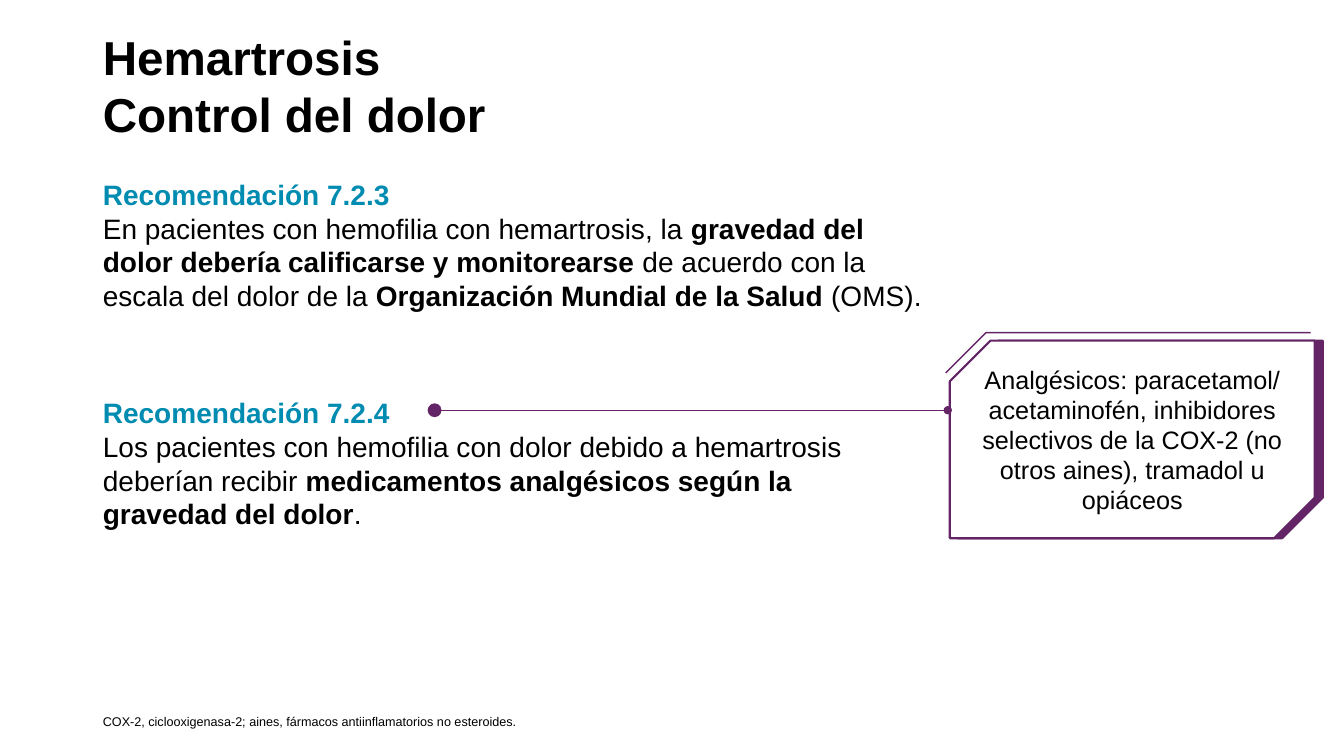
import pptx
import pptx.util
import pptx.dml.color
import pptx.enum.shapes
import pptx.enum.text
from dataclasses import dataclass
from lxml import etree
from pptx.util import Inches, Pt

RGB = pptx.dml.color.RGBColor.from_string
ALIGN = pptx.enum.text.PP_ALIGN
ANCHOR = pptx.enum.text.MSO_ANCHOR
SHAPE = pptx.enum.shapes.MSO_SHAPE
A = "{http://schemas.openxmlformats.org/drawingml/2006/main}"


@dataclass(frozen=True)
class Theme:
    face: str = "Arial"
    ink: str = "000000"
    teal: str = "008BB0"
    plum: str = "642566"
    white: str = "FFFFFF"
    title: int = 34
    body: int = 20
    label: int = 18
    note: int = 9


class Page:
    def __init__(self, deck, theme):
        self.theme = theme
        self.slide = deck.slides.add_slide(deck.slide_layouts[3])
        self.shapes = self.slide.shapes

    def font(self, para, size, bold=False):
        font = para.font
        font.name, font.size, font.bold = self.theme.face, Pt(size), bold
        font.color.rgb = RGB(self.theme.ink)

    def holder(self, index, box, anchor):
        """Move a placeholder and return its text frame."""
        shape = self.slide.placeholders[index]
        shape.left, shape.top, shape.width, shape.height = map(Inches, box)
        frame = shape.text_frame
        frame.word_wrap = True
        frame.auto_size = pptx.enum.text.MSO_AUTO_SIZE.NONE
        frame.vertical_anchor = anchor
        return frame

    def plain(self, para, size, bold=False, gap=0):
        """Left-aligned paragraph with no bullet."""
        para.alignment = ALIGN.LEFT
        para.space_before = Pt(gap)
        props = para._p.get_or_add_pPr()
        props.set("marL", "0")
        props.set("indent", "0")
        etree.SubElement(props, A + "buNone")
        self.font(para, size, bold)

    def title(self, text, box):
        para = self.holder(0, box, ANCHOR.MIDDLE).paragraphs[0]
        para.text = text
        self.plain(para, self.theme.title, True)

    def note(self, text, box):
        frame = self.holder(2, box, ANCHOR.BOTTOM)
        frame.margin_bottom = 0
        para = frame.paragraphs[0]
        para.text = text
        self.plain(para, self.theme.note)

    def advice(self, items, box, gap):
        """Headed paragraphs; every second part of the text is bold."""
        frame = self.holder(1, box, ANCHOR.TOP)
        for i, (head, parts) in enumerate(items):
            para = frame.add_paragraph() if i else frame.paragraphs[0]
            self.plain(para, self.theme.body, gap=gap if i else 0)
            run = para.add_run()
            run.text = head
            run.font.bold = True
            run.font.color.rgb = RGB(self.theme.teal)
            para.add_line_break()
            for j, part in enumerate(parts):
                run = para.add_run()
                run.text = part
                if j % 2:
                    run.font.bold = True

    def stroke(self, line, width):
        line.color.rgb = RGB(self.theme.plum)
        line.width = Pt(width)

    def snip(self, box, fill, text=None):
        shape = self.shapes.add_shape(SHAPE.SNIP_2_DIAG_RECTANGLE, *map(Inches, box))
        shape.adjustments[0], shape.adjustments[1] = 0.206, 0
        shape.shadow.inherit = False
        shape.fill.solid()
        shape.fill.fore_color.rgb = RGB(fill)
        self.stroke(shape.line, 1.5)
        if text:
            frame = shape.text_frame
            frame.word_wrap = True
            frame.vertical_anchor = ANCHOR.MIDDLE
            para = frame.paragraphs[0]
            para.text = text
            para.alignment = ALIGN.CENTER
            self.font(para, self.theme.label)

    def link(self, start, end):
        """Thin line with a medium dot at its start and a large one at its end."""
        line = self.shapes.add_connector(
            pptx.enum.shapes.MSO_CONNECTOR.STRAIGHT, *map(Inches, start + end))
        self.stroke(line.line, 0.5)
        props = line.line._get_or_add_ln()
        for tag, size in (("headEnd", "med"), ("tailEnd", "lg")):
            etree.SubElement(props, A + tag, type="oval", w=size, len=size)
        etree.SubElement(line._element.spPr, A + "effectLst")

    def trace(self, points):
        """Open outline through the points."""
        first, *rest = [tuple(map(Inches, point)) for point in points]
        pen = self.shapes.build_freeform(*first)
        pen.add_line_segments(rest, close=False)
        shape = pen.convert_to_shape()
        shape.shadow.inherit = False
        shape.fill.background()
        self.stroke(shape.line, 1)


def main():
    deck = pptx.Presentation()
    deck.slide_width, deck.slide_height = Inches(13.33), Inches(7.5)
    theme = Theme()
    page = Page(deck, theme)
    page.title("Hemartrosis\vControl del dolor", (0.92, 0.25, 11.5, 1.19))
    page.advice([
        ("Recomendación 7.2.3", [
            "En pacientes con hemofilia con hemartrosis, la ",
            "gravedad del dolor debería calificarse y monitorearse",
            " de acuerdo con la escala del dolor de la ",
            "Organización Mundial de la Salud",
            " (OMS)."]),
        ("Recomendación 7.2.4", [
            "Los pacientes con hemofilia con dolor debido a hemartrosis "
            "deberían recibir ",
            "medicamentos analgésicos según la gravedad del dolor",
            "."]),
    ], (0.92, 1.71, 8.33, 3.8), gap=60)
    page.note("COX-2, ciclooxigenasa-2; aines, fármacos antiinflamatorios "
              "no esteroides.", (0.92, 6.83, 10.85, 0.4))

    top, wide, high = 3.38, 3.62, 1.96
    page.snip((9.5, top, wide, high), theme.plum)
    page.snip((9.42, top, wide, high), theme.white,
              "Analgésicos: paracetamol/ acetaminofén, inhibidores selectivos "
              "de la COX-2 (no otros aines), tramadol u opiáceos")
    page.link((9.4, 4.07), (4.31, 4.07))
    page.trace([(9.38, 3.7), (9.78, 3.3), (13, 3.3)])
    deck.save("out.pptx")


if __name__ == "__main__":
    main()
